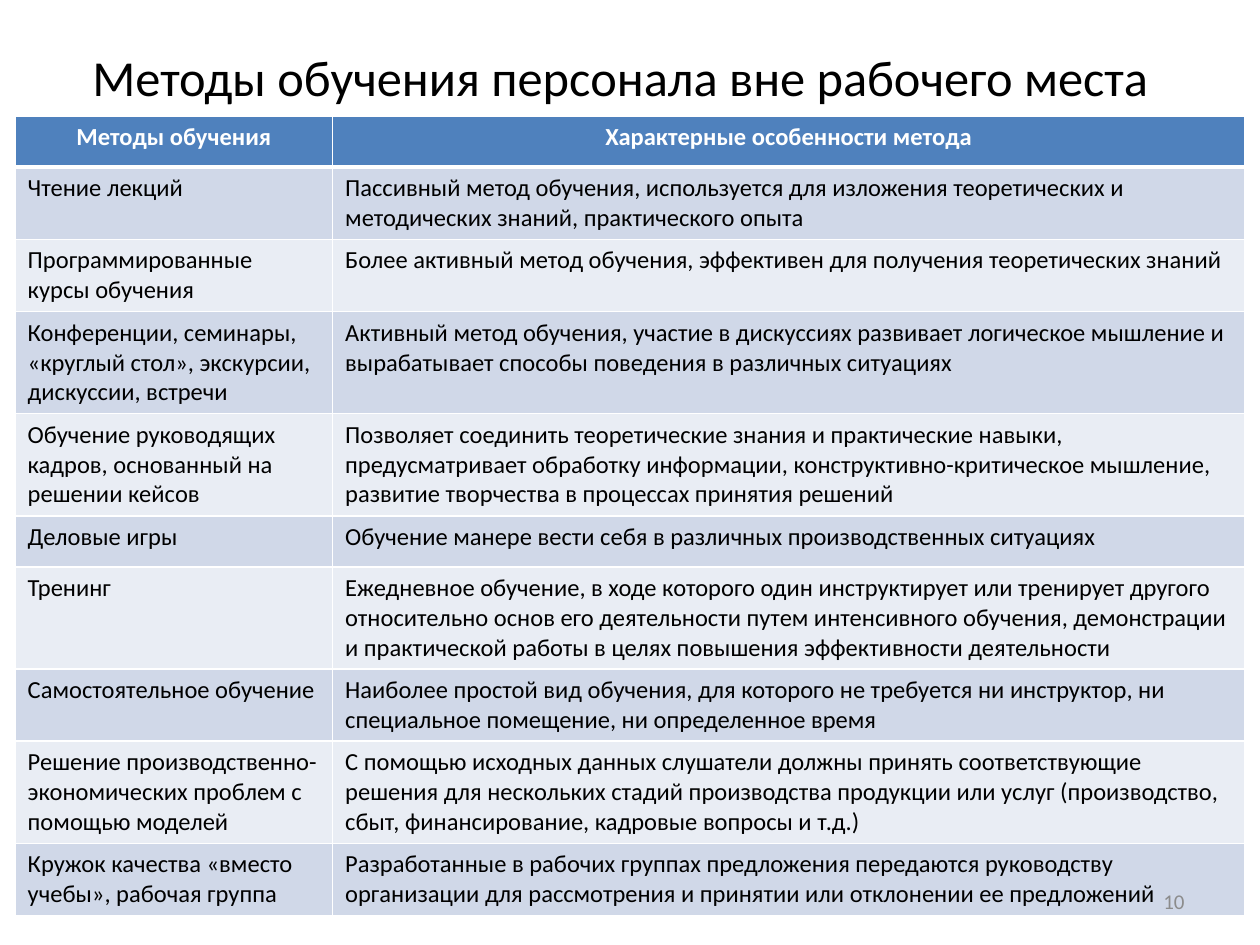
import pptx
import pptx.util
import pptx.dml.color
import pptx.enum.text
import pptx.oxml
import pptx.oxml.ns

Pt = pptx.util.Pt
ALIGN = pptx.enum.text.PP_ALIGN
MIDDLE = pptx.enum.text.MSO_ANCHOR.MIDDLE


def color(value):
    return pptx.dml.color.RGBColor.from_string(value)


def add_text(paragraph, text, size, ink, align, bold=False):
    paragraph.alignment = align
    run = paragraph.add_run()
    run.text = text
    run.font.name = "Calibri"
    run.font.size = Pt(size)
    run.font.bold = bold
    run.font.color.rgb = color(ink)


methods = [
    ("Методы обучения", "Характерные особенности метода"),
    ("Чтение лекций",
     "Пассивный метод обучения, используется для изложения теоретических и "
     "методических знаний, практического опыта"),
    ("Программированные курсы обучения",
     "Более активный метод обучения, эффективен для получения теоретических знаний"),
    ("Конференции, семинары, «круглый стол», экскурсии, дискуссии, встречи",
     "Активный метод обучения, участие в дискуссиях развивает логическое мышление и "
     "вырабатывает способы поведения в различных ситуациях"),
    ("Обучение руководящих кадров, основанный на решении кейсов",
     "Позволяет соединить теоретические знания и практические навыки, "
     "предусматривает обработку информации, конструктивно-критическое мышление, "
     "развитие творчества в процессах принятия решений"),
    ("Деловые игры",
     "Обучение манере вести себя в различных производственных ситуациях"),
    ("Тренинг",
     "Ежедневное обучение, в ходе которого один инструктирует или тренирует другого "
     "относительно основ его деятельности путем интенсивного обучения, демонстрации "
     "и практической работы в целях повышения эффективности деятельности"),
    ("Самостоятельное обучение",
     "Наиболее простой вид обучения, для которого не требуется ни инструктор, ни "
     "специальное помещение, ни определенное время"),
    ("Решение производственно-экономических проблем с помощью моделей",
     "С помощью исходных данных слушатели должны принять соответствующие "
     "решения для нескольких стадий производства продукции или услуг (производство, "
     "сбыт, финансирование, кадровые вопросы и т.д.)"),
    ("Кружок качества «вместо учебы», рабочая группа",
     "Разработанные в рабочих группах предложения передаются руководству "
     "организации для рассмотрения и принятии или отклонении ее предложений"),
]

deck = pptx.Presentation()
deck.slide_width = Pt(720)
deck.slide_height = Pt(540)
slide = deck.slides.add_slide(deck.slide_layouts[5])

title = slide.shapes.title
title.left, title.top, title.width, title.height = Pt(8.64), Pt(21.6), Pt(692), Pt(44)
title.text_frame.auto_size = pptx.enum.text.MSO_AUTO_SIZE.NONE
title.text_frame.vertical_anchor = MIDDLE
add_text(title.text_frame.paragraphs[0], "Методы обучения персонала вне рабочего места",
         28.8, "000000", ALIGN.CENTER)

row_height = 29.2
table = slide.shapes.add_table(len(methods), 2, Pt(8.64), Pt(66.24), Pt(702.72),
                               Pt(row_height * len(methods))).table
table.columns[0].width = Pt(181.44)
table.columns[1].width = Pt(521.28)

for row, texts in enumerate(methods):
    table.rows[row].height = Pt(row_height)
    header = row == 0
    fill = "4F81BD" if header else ("E9EDF4", "D0D8E8")[row % 2]
    for column, text in enumerate(texts):
        cell = table.cell(row, column)
        add_text(cell.text_frame.paragraphs[0], text, 14,
                 "FFFFFF" if header else "000000",
                 ALIGN.CENTER if header else ALIGN.LEFT, header)
        borders = cell._tc.get_or_add_tcPr()
        for side in ("lnL", "lnR", "lnT", "lnB"):
            under_header = (row, side) in ((0, "lnB"), (1, "lnT"))
            borders.append(pptx.oxml.parse_xml(
                f'<a:{side} {pptx.oxml.ns.nsdecls("a")} w="{Pt(3 if under_header else 1)}">'
                f'<a:solidFill><a:srgbClr val="FFFFFF"/></a:solidFill></a:{side}>'))
        cell.fill.solid()
        cell.fill.fore_color.rgb = color(fill)

page_number = slide.shapes.add_textbox(Pt(516), Pt(500.4), Pt(168), Pt(28.8))
page_number.text_frame.word_wrap = True
page_number.text_frame.vertical_anchor = MIDDLE
add_text(page_number.text_frame.paragraphs[0], "10", 12, "8C8C8C", ALIGN.RIGHT)

deck.save("out.pptx")
